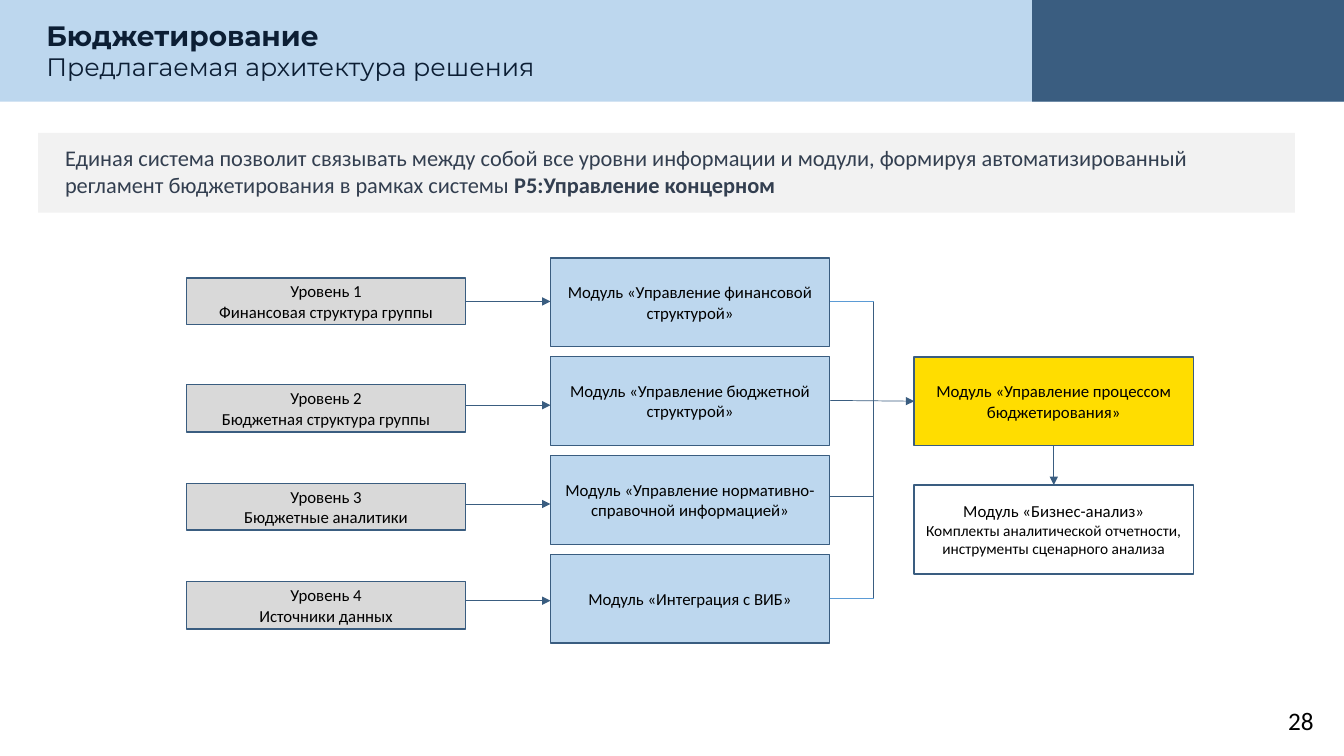
from pptx import Presentation
from pptx.dml.color import RGBColor
from pptx.enum.shapes import MSO_CONNECTOR, MSO_SHAPE
from pptx.enum.text import MSO_ANCHOR, PP_ALIGN
from pptx.oxml.ns import qn
from pptx.util import Pt
from lxml import etree

RECTANGLE = MSO_SHAPE.RECTANGLE
STRAIGHT = MSO_CONNECTOR.STRAIGHT
TOP, MIDDLE = MSO_ANCHOR.TOP, MSO_ANCHOR.MIDDLE
LEFT, CENTER, RIGHT = PP_ALIGN.LEFT, PP_ALIGN.CENTER, PP_ALIGN.RIGHT

PALE_BLUE = RGBColor(0xBD, 0xD7, 0xEE)
DARK_BLUE = RGBColor(0x3A, 0x5D, 0x80)
BRIGHT_BLUE = RGBColor(0x5B, 0x9B, 0xD5)
NAVY = RGBColor(0x0C, 0x1E, 0x34)
SLATE = RGBColor(0x33, 0x3F, 0x50)
PALE_GRAY = RGBColor(0xF2, 0xF2, 0xF2)
GRAY = RGBColor(0xD9, 0xD9, 0xD9)
YELLOW = RGBColor(0xFF, 0xDD, 0x00)
WHITE = RGBColor(0xFF, 0xFF, 0xFF)
BLACK = RGBColor(0, 0, 0)

BOX_WIDTH = 199.5
MODULE_HEIGHT = 63.4
LEVEL_LEFT, MODULE_LEFT, RESULT_LEFT = 133.2, 393.2, 653
MODULE_TOP, MODULE_STEP = 184.2, 70.6
PROCESS_TOP, ANALYSIS_TOP = 254.9, 346.5
BUS_X = 624.2

LEVELS = [
    ("Уровень 1", "Финансовая структура группы", 198.7, 33.1, 215.3),
    ("Уровень 2", "Бюджетная структура группы", 274.8, 33.8, 289.4),
    ("Уровень 3", "Бюджетные аналитики", 345.5, 33.1, 360),
    ("Уровень 4", "Источники данных", 415.5, 33.8, 429.1),
]
MODULES = [
    "Модуль «Управление финансовой структурой»",
    "Модуль «Управление бюджетной структурой»",
    "Модуль «Управление нормативно-справочной информацией»",
    "Модуль «Интеграция с ВИБ»",
]
BRANCHES = [(215.3, BRIGHT_BLUE), (354.2, DARK_BLUE), (427.7, BRIGHT_BLUE)]


def write_text(shape, paragraphs, color, align=LEFT, anchor=TOP, font="Calibri"):
    frame = shape.text_frame
    frame.word_wrap = True
    frame.vertical_anchor = anchor
    for index, runs in enumerate(paragraphs):
        para = frame.paragraphs[0] if index == 0 else frame.add_paragraph()
        para.alignment = align
        for text, size, bold in runs:
            span = para.add_run()
            span.text = text.rstrip("\n")
            span.font.name = font
            span.font.size = Pt(size)
            span.font.bold = bold
            span.font.color.rgb = color
            if text.endswith("\n"):
                para.add_line_break()


def add_box(page, left, top, width, height, fill, outline=None):
    box = page.shapes.add_shape(RECTANGLE, Pt(left), Pt(top), Pt(width), Pt(height))
    box.shadow.inherit = False
    box.fill.solid()
    box.fill.fore_color.rgb = fill
    if outline is None:
        box.line.fill.background()
    else:
        box.line.color.rgb = outline
        box.line.width = Pt(1)
    return box


def add_node(page, left, top, height, fill, paragraphs):
    box = add_box(page, left, top, BOX_WIDTH, height, fill, DARK_BLUE)
    write_text(box, paragraphs, BLACK, CENTER, MIDDLE)


def add_label(page, left, top, width, height, runs, color, **style):
    label = page.shapes.add_textbox(Pt(left), Pt(top), Pt(width), Pt(height))
    write_text(label, [runs], color, **style)


def add_line(page, x1, y1, x2, y2, color=DARK_BLUE, arrow=False):
    line = page.shapes.add_connector(STRAIGHT, Pt(x1), Pt(y1), Pt(x2), Pt(y2))
    line.line.color.rgb = color
    line.line.width = Pt(0.5)
    if arrow:
        etree.SubElement(line.line._get_or_add_ln(), qn("a:tailEnd"), type="triangle")
    etree.SubElement(line._element.spPr, qn("a:effectLst"))


def add_header(page):
    add_box(page, 0, -0.7, 960, 73.4, PALE_BLUE)
    add_box(page, 737.3, -0.7, 222.7, 73.4, DARK_BLUE)
    title = [("Бюджетирование\n", 20, True), ("Предлагаемая архитектура решения", 18, False)]
    add_label(page, 26, 9.4, 480, 53.3, title, NAVY, font="Montserrat")


def add_summary(page):
    add_box(page, 27.2, 95, 897.8, 56.9, PALE_GRAY)
    summary = [
        ("Единая система позволит связывать между собой все уровни информации и модули, "
         "формируя автоматизированный регламент бюджетирования в рамках системы ", 16, False),
        ("Р5:Управление концерном", 16, True),
    ]
    add_label(page, 39.4, 99.4, 885.6, 46, summary, SLATE)


def add_nodes(page):
    for index, name in enumerate(MODULES):
        top = MODULE_TOP + index * MODULE_STEP
        add_node(page, MODULE_LEFT, top, MODULE_HEIGHT, PALE_BLUE, [[(name, 12, False)]])
    process = [("Модуль «Управление процессом бюджетирования»", 12, False)]
    add_node(page, RESULT_LEFT, PROCESS_TOP, MODULE_HEIGHT, YELLOW, [process])
    analysis = [
        ("Модуль «Бизнес-анализ»\n", 12, False),
        ("Комплекты аналитической отчетности, инструменты сценарного анализа", 11, False),
    ]
    add_node(page, RESULT_LEFT, ANALYSIS_TOP, MODULE_HEIGHT, WHITE, [analysis])
    for level, subject, top, height, _ in LEVELS:
        paragraphs = [[(level, 12, False)], [(subject, 12, False)]]
        add_node(page, LEVEL_LEFT, top, height, GRAY, paragraphs)


def add_links(page):
    module_right = MODULE_LEFT + BOX_WIDTH
    result_center = RESULT_LEFT + BOX_WIDTH / 2
    for *_, y in LEVELS:
        add_line(page, LEVEL_LEFT + BOX_WIDTH, y, MODULE_LEFT, y, arrow=True)
    add_line(page, BUS_X, BRANCHES[0][0], BUS_X, BRANCHES[-1][0])
    for y, color in BRANCHES:
        add_line(page, BUS_X, y, module_right, y, color)
    add_line(page, module_right, 286, RESULT_LEFT, 286.6, arrow=True)
    add_line(page, result_center, PROCESS_TOP + MODULE_HEIGHT,
             result_center, ANALYSIS_TOP, arrow=True)


def main():
    deck = Presentation()
    deck.slide_width, deck.slide_height = Pt(960), Pt(540)
    page = deck.slides.add_slide(deck.slide_layouts[6])
    add_header(page)
    add_summary(page)
    add_nodes(page)
    add_links(page)
    add_label(page, 729.4, 500.4, 216, 28.8, [("28", 18, False)], BLACK,
              align=RIGHT, anchor=MIDDLE)
    deck.save("out.pptx")


if __name__ == "__main__":
    main()
